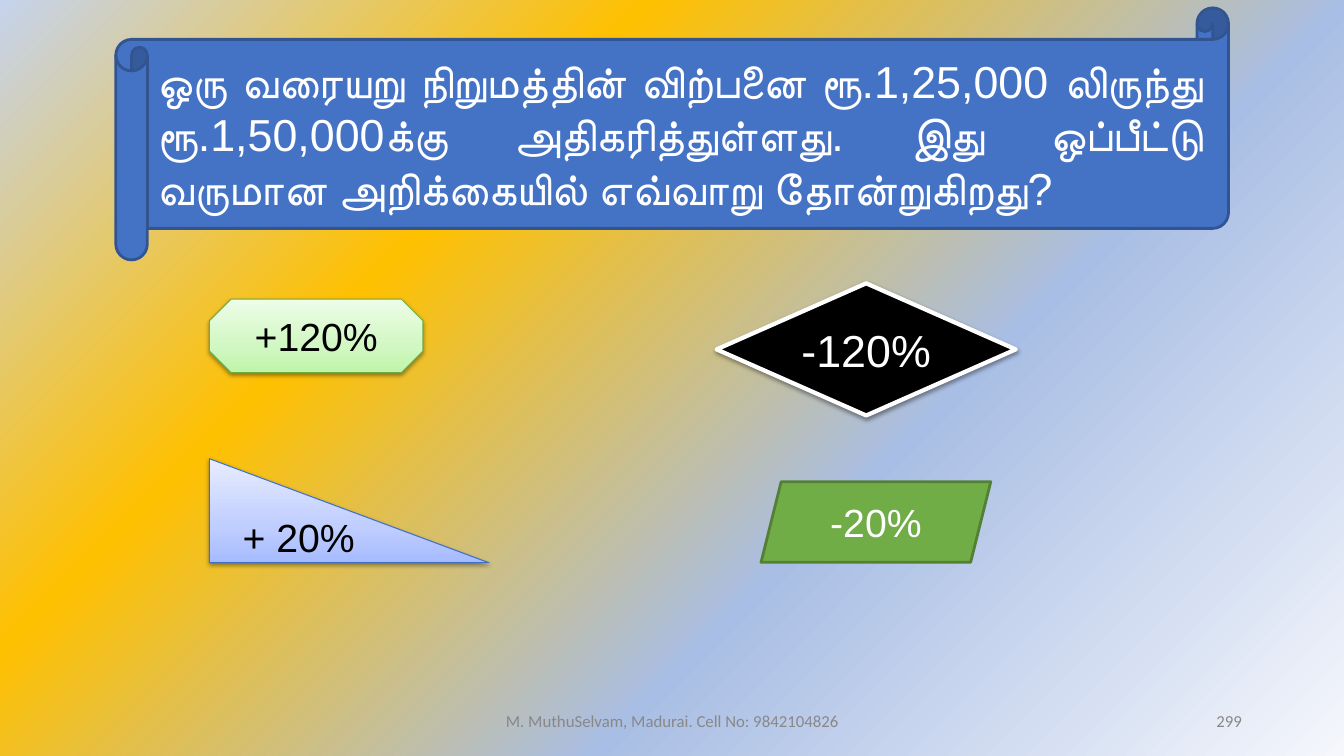
from pptx import Presentation
from pptx.dml.color import RGBColor
from pptx.enum.shapes import MSO_SHAPE
from pptx.enum.text import MSO_ANCHOR, PP_ALIGN
from pptx.oxml import parse_xml
from pptx.oxml.ns import nsdecls, qn
from pptx.util import Cm, Pt

LEFT, CENTER, RIGHT, JUSTIFY = PP_ALIGN.LEFT, PP_ALIGN.CENTER, PP_ALIGN.RIGHT, PP_ALIGN.JUSTIFY
MIDDLE = MSO_ANCHOR.MIDDLE
SCROLL, OCTAGON, DIAMOND = MSO_SHAPE.HORIZONTAL_SCROLL, MSO_SHAPE.OCTAGON, MSO_SHAPE.DIAMOND
TRIANGLE, PARALLELOGRAM = MSO_SHAPE.RIGHT_TRIANGLE, MSO_SHAPE.PARALLELOGRAM

# Content
QUESTION = ("ஒரு வரையறு நிறுமத்தின் விற்பனை ரூ.1,25,000 லிருந்து ரூ.1,50,000க்கு "
            "அதிகரித்துள்ளது. இது ஒப்பீட்டு வருமான அறிக்கையில் எவ்வாறு தோன்றுகிறது?")
BACKDROP = [(0, "F5F7FC"), (36, "A9BEE4"), (69, "FFC000"), (100, "C5D3ED")]
GREEN_FADE = [(0, "BEF5A7"), (35, "D1F7C2"), (100, "EDFDE7")]
BLUE_FADE = [(0, "A6BBFF"), (35, "C0CEFF"), (100, "E7ECFF")]

# Shape, place in cm, fill, line colour and width, shadow, text, size, colour, alignment
CARDS = [
    (SCROLL, (2.92, 0.2, 28.04, 6.35), "4472C4", "325491", 2, False,
     QUESTION, 32, "FFFFFF", JUSTIFY),
    (OCTAGON, (5.28, 7.54, 5.38, 1.85), GREEN_FADE, "6DAC43", 0.75, True,
     "+120%", 28, "000000", CENTER),
    (DIAMOND, (18.06, 7.14, 7.54, 3.33), "000000", "FFFFFF", 3, True,
     "-120%", 32, "FFFFFF", CENTER),
    (TRIANGLE, (5.28, 11.56, 7.04, 2.62), BLUE_FADE, "3F6FC3", 0.75, True,
     "+ 20%", 28, "000000", LEFT),
    (PARALLELOGRAM, (19.18, 12.14, 5.79, 2.03), "70AD47", "538035", 2, False,
     "-20%", 28, "FFFFFF", CENTER),
]
# Text, left and width in cm, alignment
FOOTERS = [
    ("M. MuthuSelvam, Madurai. Cell No: 9842104826", 11.23, 11.43, CENTER),
    ("299", 23.93, 7.62, RIGHT),
]
FOOTER_TOP, FOOTER_HEIGHT = 17.65, 1.02

LINEAR_UP = '<a:lin ang="16200000" scaled="0"/>'
FROM_CORNER = ('<a:path path="circle"><a:fillToRect l="100000" t="100000"/></a:path>'
               '<a:tileRect r="-100000" b="-100000"/>')
SHADOW = (f'<a:outerShdw {nsdecls("a")} blurRad="40000" dist="20000" dir="5400000" rotWithShape="0">'
          '<a:srgbClr val="000000"><a:alpha val="38000"/></a:srgbClr></a:outerShdw>')


def color(value):
    return RGBColor.from_string(value)


def set_gradient(owner, stops, direction):
    """Swap the solid fill of a properties element for a gradient."""
    marks = "".join(f'<a:gs pos="{position * 1000}"><a:srgbClr val="{value}"/></a:gs>'
                    for position, value in stops)
    gradient = parse_xml(f'<a:gradFill {nsdecls("a")} rotWithShape="1">'
                         f'<a:gsLst>{marks}</a:gsLst>{direction}</a:gradFill>')
    owner.replace(owner.find(qn("a:solidFill")), gradient)


def write(box, text, font, size, text_color, alignment):
    frame = box.text_frame
    frame.word_wrap = True
    frame.vertical_anchor = MIDDLE
    frame.text = text
    para = frame.paragraphs[0]
    para.alignment = alignment
    span = para.runs[0]
    span.font.name = font
    span.font.size = Pt(size)
    span.font.color.rgb = color(text_color)


deck = Presentation()
deck.slide_width, deck.slide_height = Cm(33.87), Cm(19.05)
page = deck.slides.add_slide(deck.slide_layouts[6])

# Background
page.background.fill.solid()
set_gradient(page._element.find(".//" + qn("p:bgPr")), BACKDROP, FROM_CORNER)

# Question and answer options
for kind, place, fill, line, width, shadowed, text, size, text_color, alignment in CARDS:
    card = page.shapes.add_shape(kind, *map(Cm, place))
    card.fill.solid()
    if isinstance(fill, str):
        card.fill.fore_color.rgb = color(fill)
    else:
        set_gradient(card._element.spPr, fill, LINEAR_UP)
    card.line.color.rgb = color(line)
    card.line.width = Pt(width)
    card.shadow.inherit = False
    if shadowed:
        card._element.spPr.find(qn("a:effectLst")).append(parse_xml(SHADOW))
    write(card, text, "Arial", size, text_color, alignment)

# Footer and page number
for text, left, width, alignment in FOOTERS:
    box = page.shapes.add_textbox(Cm(left), Cm(FOOTER_TOP), Cm(width), Cm(FOOTER_HEIGHT))
    write(box, text, "Calibri", 12, "888888", alignment)

deck.save("out.pptx")
